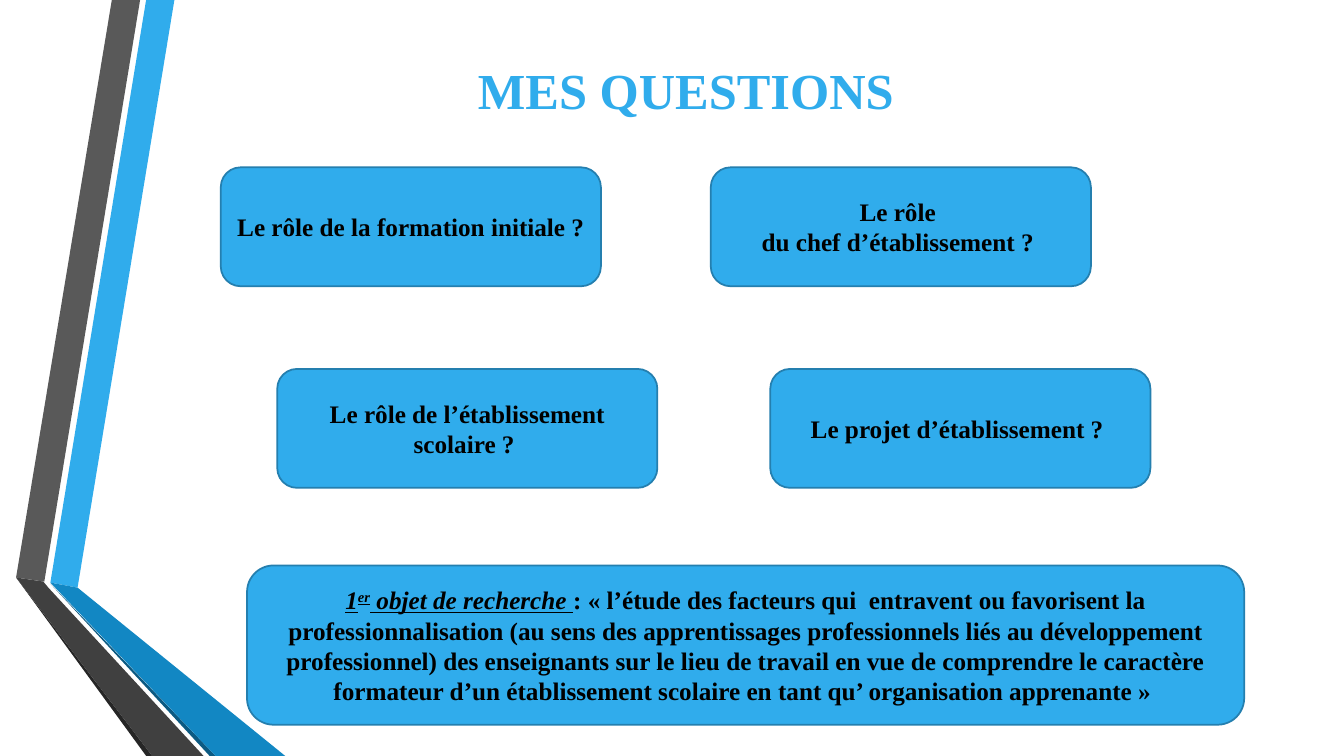
from pptx import Presentation
from pptx.dml.color import RGBColor
from pptx.enum.shapes import MSO_SHAPE as Preset
from pptx.enum.text import MSO_ANCHOR as Anchor, MSO_AUTO_SIZE as AutoSize, PP_ALIGN as Align
from pptx.util import Pt

PX = 9144  # EMU per px, 100 px to the inch
THEME = {
    "font": "Times New Roman",
    "title_size": Pt(36),
    "text_size": Pt(18),
    "line_width": Pt(1.25),
    "accent": RGBColor.from_string("30ACEC"),
    "outline": RGBColor.from_string("247FAF"),
    "text": RGBColor.from_string("000000"),
}


def add_span(para, text, size, color, **formats):
    span = para.add_run()
    span.text = text
    span.font.color.rgb = color
    for name, value in {"name": THEME["font"], "size": size, "bold": True, **formats}.items():
        setattr(span.font, name, value)
    return span


def add_box(preset, left, top, width, height, paragraphs):
    """Add a blue box; each paragraph is a list of (text, formats, baseline)."""
    box = page.shapes.add_shape(preset, left * PX, top * PX, width * PX, height * PX)
    box.shadow.inherit = False
    box.fill.solid()
    box.fill.fore_color.rgb = THEME["accent"]
    box.line.color.rgb = THEME["outline"]
    box.line.width = THEME["line_width"]
    frame = box.text_frame
    frame.word_wrap = True
    frame.vertical_anchor = Anchor.MIDDLE
    for index, pieces in enumerate(paragraphs):
        para = frame.add_paragraph() if index else frame.paragraphs[0]
        para.alignment = Align.CENTER
        for text, formats, baseline in pieces:
            span = add_span(para, text, THEME["text_size"], THEME["text"], **formats)
            if baseline:
                span.font._element.set("baseline", str(baseline * 1000))


deck = Presentation()
deck.slide_width, deck.slide_height = 1333 * PX, 750 * PX
page = deck.slides.add_slide(deck.slide_layouts[5])

# Folded ribbons on the left edge
ribbons = [
    ("30ACEC", [(50, 578), (77, 583), (173, 0), (145, 0)]),
    ("595959", [(139, 0), (111, 0), (16, 573), (44, 577)]),
    ("262626", [(16, 573), (145, 750), (151, 750)]),
    ("0C5A82", [(50, 579), (208, 750), (214, 750)]),
    ("1287C3", [(50, 578), (214, 750), (283, 750), (77, 583)]),
    ("404040", [(202, 750), (48, 583), (43, 577), (16, 573), (151, 750)]),
]
for color, (start, *corners) in ribbons:
    outline = page.shapes.build_freeform(*start, scale=PX)
    outline.add_line_segments(corners, close=True)
    ribbon = outline.convert_to_shape()
    ribbon.shadow.inherit = False
    ribbon.fill.solid()
    ribbon.fill.fore_color.rgb = RGBColor.from_string(color)
    ribbon.line.fill.background()

# Title
title = page.shapes.title
for side, length in {"left": 464, "top": 54, "width": 449, "height": 71}.items():
    setattr(title, side, length * PX)
frame = title.text_frame
for name, value in {"word_wrap": True, "auto_size": AutoSize.NONE, "vertical_anchor": Anchor.TOP}.items():
    setattr(frame, name, value)
frame.paragraphs[0].alignment = Align.LEFT
add_span(frame.paragraphs[0], "MES QUESTIONS", THEME["title_size"], THEME["accent"])

# Four questions
questions = [
    (219, 166, ["Le rôle de la formation initiale ? "]),
    (705, 166, ["Le rôle ", "du chef d’établissement ? "]),
    (275, 366, ["Le rôle de l’établissement scolaire ? "]),
    (764, 366, ["Le projet d’établissement ? "]),
]
for left, top, lines in questions:
    add_box(Preset.FLOWCHART_ALTERNATE_PROCESS, left, top, 377, 118,
            [[(line, {}, 0)] for line in lines])

# Research object
lead = {"italic": True, "underline": True}
research = [
    ("1", lead, 0),
    ("er", lead, 30),
    (" objet de recherche ", lead, 0),
    (": « l’étude des facteurs qui  entravent ou favorisent la professionnalisation "
     "(au sens des apprentissages professionnels liés au développement professionnel) "
     "des enseignants sur le lieu de travail en vue de comprendre le caractère formateur "
     "d’un établissement scolaire en tant qu’ organisation apprenante » ", {}, 0),
]
add_box(Preset.ROUNDED_RECTANGLE, 245, 561, 989, 158, [research])

deck.save("out.pptx")
